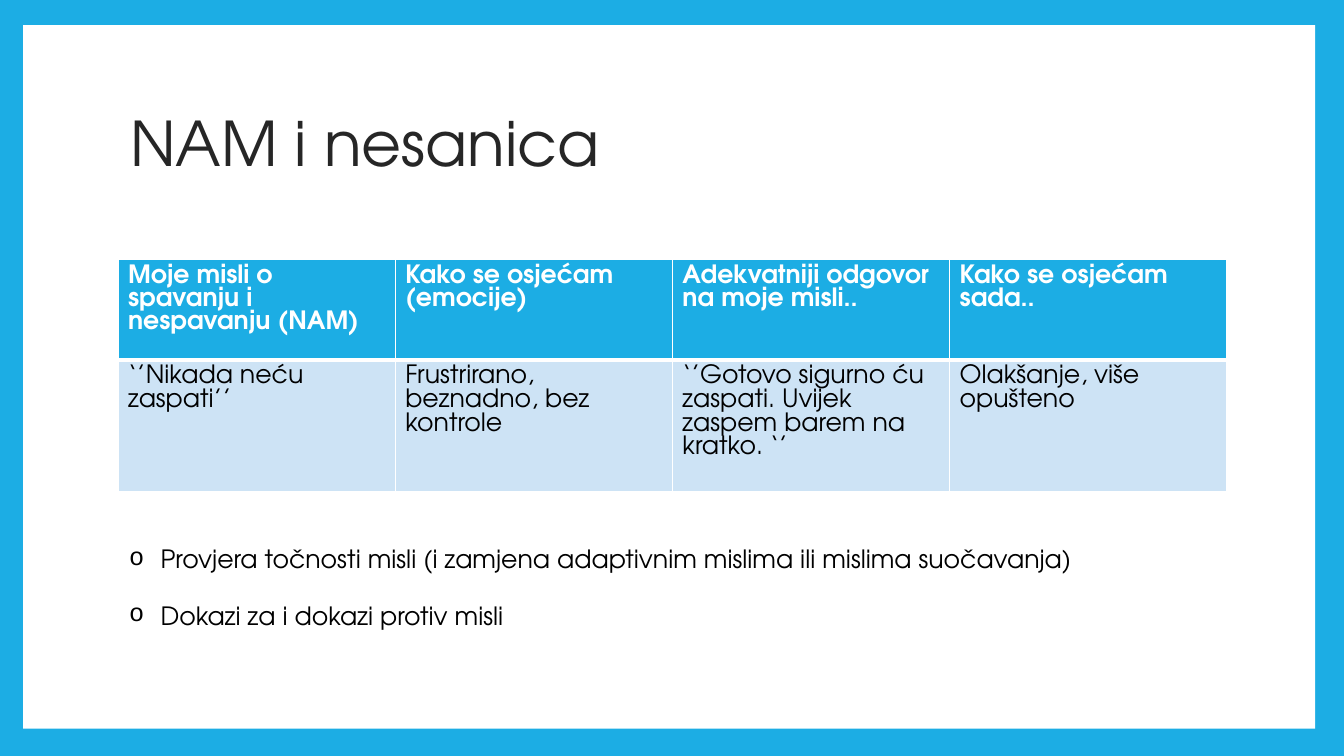
"""Build the slide on negative automatic thoughts and insomnia."""
from lxml import etree
from pptx import Presentation
from pptx.dml.color import RGBColor
from pptx.enum.shapes import MSO_SHAPE
from pptx.enum.text import MSO_ANCHOR, MSO_AUTO_SIZE, PP_ALIGN
from pptx.oxml.ns import qn
from pptx.util import Pt

RECTANGLE = MSO_SHAPE.RECTANGLE
LEFT = PP_ALIGN.LEFT
MIDDLE, TOP = MSO_ANCHOR.MIDDLE, MSO_ANCHOR.TOP
NO_AUTOFIT, GROW = MSO_AUTO_SIZE.NONE, MSO_AUTO_SIZE.SHAPE_TO_FIT_TEXT

THEME = {
    "font": "TeX Gyre Adventor",
    "bullet_font": "Courier New",
    "blue": RGBColor(0x1C, 0xAD, 0xE4),
    "pale": RGBColor(0xCD, 0xE3, 0xF5),
    "white": RGBColor(0xFF, 0xFF, 0xFF),
    "black": RGBColor(0, 0, 0),
    "ink": RGBColor(0x26, 0x26, 0x26),
    "title_size": Pt(44),
    "text_size": Pt(18),
}


def write(frame, lines, color, size, bold=False, **paragraph_format):
    """Fill a text frame with one formatted paragraph per line."""
    frame.text = "\n".join(lines)
    for para in frame.paragraphs:
        for name, value in paragraph_format.items():
            setattr(para, name, value)
        font = para.runs[0].font
        for name, value in {"name": THEME["font"], "size": size, "bold": bold}.items():
            setattr(font, name, value)
        font.color.rgb = color


def place(shape, left, top, width, height):
    """Move and size a shape in points."""
    for name, value in {"left": left, "top": top, "width": width, "height": height}.items():
        setattr(shape, name, Pt(value))


deck = Presentation()
deck.slide_width, deck.slide_height = Pt(960), Pt(540)
page = deck.slides.add_slide(deck.slide_layouts[1])
title, body = page.placeholders

panels = [((0, 0, 960, 540), "blue"), ((16.5, 18, 923, 502.5), "white")]
for position, (area, color) in enumerate(panels):
    panel = page.shapes.add_shape(RECTANGLE, *map(Pt, area))
    panel.shadow.inherit = False
    panel.fill.solid()
    panel.fill.fore_color.rgb = THEME[color]
    panel.line.fill.background()
    page.shapes._spTree.insert(2 + position, panel._element)

place(title, 85.7, 44.6, 771, 120.2)
write(title.text_frame, ["NAM i nesanica"], THEME["ink"], THEME["title_size"],
      alignment=LEFT, line_spacing=0.9)
title.text_frame.auto_size = NO_AUTOFIT
title.text_frame.vertical_anchor = MIDDLE

rows = [
    [["Moje misli o spavanju i nespavanju (NAM)"],
     ["Kako se osjećam", "(emocije)"],
     ["Adekvatniji odgovor na moje misli.."],
     ["Kako se osjećam sada.."]],
    [["‘’Nikada neću zaspati’’"],
     ["Frustrirano, beznadno, bez kontrole"],
     ["‘’Gotovo sigurno ću zaspati. Uvijek zaspem barem na kratko. ‘’"],
     ["Olakšanje, više opušteno"]],
]
row_styles = [
    {"height": 56, "fill": "blue", "color": "white", "bold": True, "bottom": 3},
    {"height": 74, "fill": "pale", "color": "black", "bold": False, "bottom": 1},
]
table = page.shapes.add_table(2, 4, Pt(84.3), Pt(185.3), Pt(792), Pt(130)).table
for row, style, texts in zip(table.rows, row_styles, rows):
    row.height = Pt(style["height"])
    for cell, lines in zip(row.cells, texts):
        write(cell.text_frame, lines, THEME[style["color"]], THEME["text_size"], style["bold"])
        properties = cell._tc.get_or_add_tcPr()
        for side, width in {"lnL": 1, "lnR": 1, "lnT": 1, "lnB": style["bottom"]}.items():
            border = etree.SubElement(properties, qn(f"a:{side}"), w=str(Pt(width)))
            fill = etree.SubElement(border, qn("a:solidFill"))
            etree.SubElement(fill, qn("a:srgbClr"), val=str(THEME["white"]))
        cell.fill.solid()
        cell.fill.fore_color.rgb = THEME[style["fill"]]

place(body, 85, 373.7, 791.3, 94.3)
write(body.text_frame,
      ["Provjera točnosti misli (i zamjena adaptivnim mislima ili mislima suočavanja)",
       "Dokazi za i dokazi protiv misli"],
      THEME["black"], THEME["text_size"],
      alignment=LEFT, line_spacing=1.5, space_before=Pt(8), space_after=Pt(0))
body.text_frame.auto_size = GROW
body.text_frame.vertical_anchor = TOP
for para in body.text_frame.paragraphs:
    properties = para._p.get_or_add_pPr()
    for name, value in {"marL": Pt(22.5), "indent": Pt(-22.5)}.items():
        properties.set(name, str(value))
    etree.SubElement(properties, qn("a:buFont"), typeface=THEME["bullet_font"])
    etree.SubElement(properties, qn("a:buChar"), char="o")

deck.save("out.pptx")
